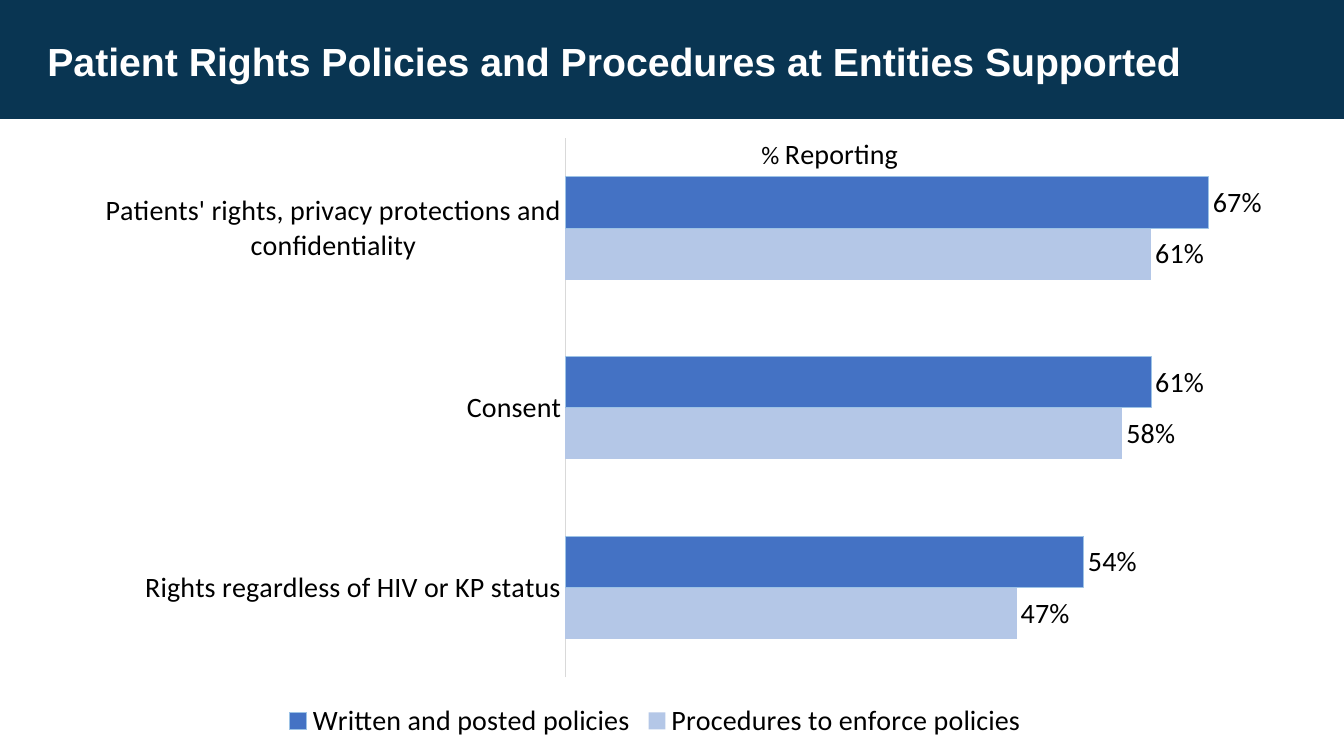
from pptx import Presentation
from pptx.chart.data import CategoryChartData
from pptx.dml.color import RGBColor
from pptx.enum.chart import XL_CHART_TYPE, XL_LABEL_POSITION, XL_LEGEND_POSITION, XL_TICK_MARK
from pptx.enum.shapes import MSO_SHAPE
from pptx.enum.text import MSO_ANCHOR, PP_ALIGN
from pptx.oxml import parse_xml
from pptx.oxml.ns import nsdecls, qn
from pptx.util import Inches, Pt

RECTANGLE = MSO_SHAPE.RECTANGLE
TOP = MSO_ANCHOR.TOP
LEFT = PP_ALIGN.LEFT
CLUSTERED_BAR = XL_CHART_TYPE.BAR_CLUSTERED
OUTSIDE_END = XL_LABEL_POSITION.OUTSIDE_END
BOTTOM = XL_LEGEND_POSITION.BOTTOM
NO_TICK = XL_TICK_MARK.NONE

NAVY = RGBColor(0x09, 0x35, 0x52)
WHITE = RGBColor(0xFF, 0xFF, 0xFF)
BLACK = RGBColor(0x00, 0x00, 0x00)
AXIS_GREY = RGBColor(0xD9, 0xD9, 0xD9)
PALE_BLUE = RGBColor(0xB4, 0xC7, 0xE7)
STRONG_BLUE = RGBColor(0x44, 0x72, 0xC4)
EDGE_BLUE = RGBColor(0x9D, 0xC3, 0xE6)

SLIDE_WIDTH, SLIDE_HEIGHT = 13.33, 7.5
TITLE_ONLY = 5
CATEGORIES = [
    "Rights regardless of HIV or KP status",
    "Consent",
    "Patients' rights, privacy protections and confidentiality",
]
SERIES = [
    ("Procedures to enforce policies", (0.47, 0.58, 0.61), PALE_BLUE, None),
    ("Written and posted policies", (0.54, 0.61, 0.67), STRONG_BLUE, EDGE_BLUE),
]


def set_font(font, size, color=BLACK, name="Calibri", bold=False):
    font.size = Pt(size)
    font.name = name
    font.bold = bold
    font.color.rgb = color


def add_band(page, title):
    band = page.shapes.add_shape(RECTANGLE, 0, 0, Inches(SLIDE_WIDTH), Inches(1.18))
    band.shadow.inherit = False
    band.fill.solid()
    band.fill.fore_color.rgb = NAVY
    band.line.fill.background()
    title._element.addprevious(band._element)


def format_title(title, text):
    title.left, title.top = Inches(0.37), Inches(0.37)
    title.width, title.height = Inches(12.04), Inches(0.8)
    frame = title.text_frame
    frame.text = text
    frame.vertical_anchor = TOP
    frame.word_wrap = True
    para = frame.paragraphs[0]
    para.alignment = LEFT
    para.line_spacing = 0.9
    set_font(para.font, 28, WHITE, "Arial", True)


def place_by_share(parent, index, target="", **shares):
    old = parent.find(qn("c:layout"))
    if old is not None:
        parent.remove(old)
    target_tag = f'<c:layoutTarget val="{target}"/>' if target else ""
    modes = "".join(f'<c:{side}Mode val="edge"/>' for side in "xy")
    values = "".join(f'<c:{key} val="{share}"/>' for key, share in shares.items())
    parent.insert(index, parse_xml(
        f'<c:layout {nsdecls("c")}><c:manualLayout>{target_tag}{modes}{values}'
        "</c:manualLayout></c:layout>"))


def format_chart_title(chart):
    chart.has_title = True
    para = chart.chart_title.text_frame.paragraphs[0]
    for text, size in (("% ", 18), ("Reporting", 20)):
        span = para.add_run()
        span.text = text
        set_font(span.font, size)
    chart.chart_title.include_in_layout = True
    title = chart.chart_title._element
    place_by_share(title, 1, x=0.58, y=0.08)
    title.find(qn("c:overlay")).set("val", "1")


def format_axes(chart):
    categories = chart.category_axis
    categories.major_tick_mark = categories.minor_tick_mark = NO_TICK
    categories.has_major_gridlines = False
    categories.format.line.color.rgb = AXIS_GREY
    categories.format.line.width = Pt(0.75)
    set_font(categories.tick_labels.font, 20)
    values = chart.value_axis
    values.minimum_scale, values.maximum_scale = 0, 0.75
    values.has_major_gridlines = False
    values.visible = False


def format_series(series, fill, edge):
    series.format.fill.solid()
    series.format.fill.fore_color.rgb = fill
    if edge is None:
        series.format.line.fill.background()
    else:
        series.format.line.color.rgb = edge
        series.format.line.width = Pt(0.75)
    labels = series.data_labels
    labels.show_value = True
    labels.number_format = "0%"
    labels.number_format_is_linked = False
    labels.position = OUTSIDE_END
    set_font(labels.font, 20)


def add_policy_chart(page):
    data = CategoryChartData(number_format="0%")
    data.categories = CATEGORIES
    for name, values, _, _ in SERIES:
        data.add_series(name, values)
    chart = page.shapes.add_chart(
        CLUSTERED_BAR, Inches(0.12), Inches(0.78), Inches(12.76), Inches(6.6), data).chart
    set_font(chart.font, 10)
    format_chart_title(chart)
    format_axes(chart)
    plot = chart.plots[0]
    plot.gap_width, plot.overlap = 150, 0
    plot.vary_by_categories = False
    for series, (_, _, fill, edge) in zip(plot.series, SERIES):
        format_series(series, fill, edge)
    chart.has_legend = True
    chart.legend.position = BOTTOM
    chart.legend.include_in_layout = False
    set_font(chart.legend.font, 20)
    area = chart._chartSpace.find(".//" + qn("c:plotArea"))
    place_by_share(area, 0, "inner", x=0.43, y=0.09, w=0.56, h=0.81)


def main():
    deck = Presentation()
    deck.slide_width, deck.slide_height = Inches(SLIDE_WIDTH), Inches(SLIDE_HEIGHT)
    page = deck.slides.add_slide(deck.slide_layouts[TITLE_ONLY])
    title = page.shapes.title
    format_title(title, "Patient Rights Policies and Procedures at Entities Supported")
    add_band(page, title)
    add_policy_chart(page)
    deck.save("out.pptx")


if __name__ == "__main__":
    main()
